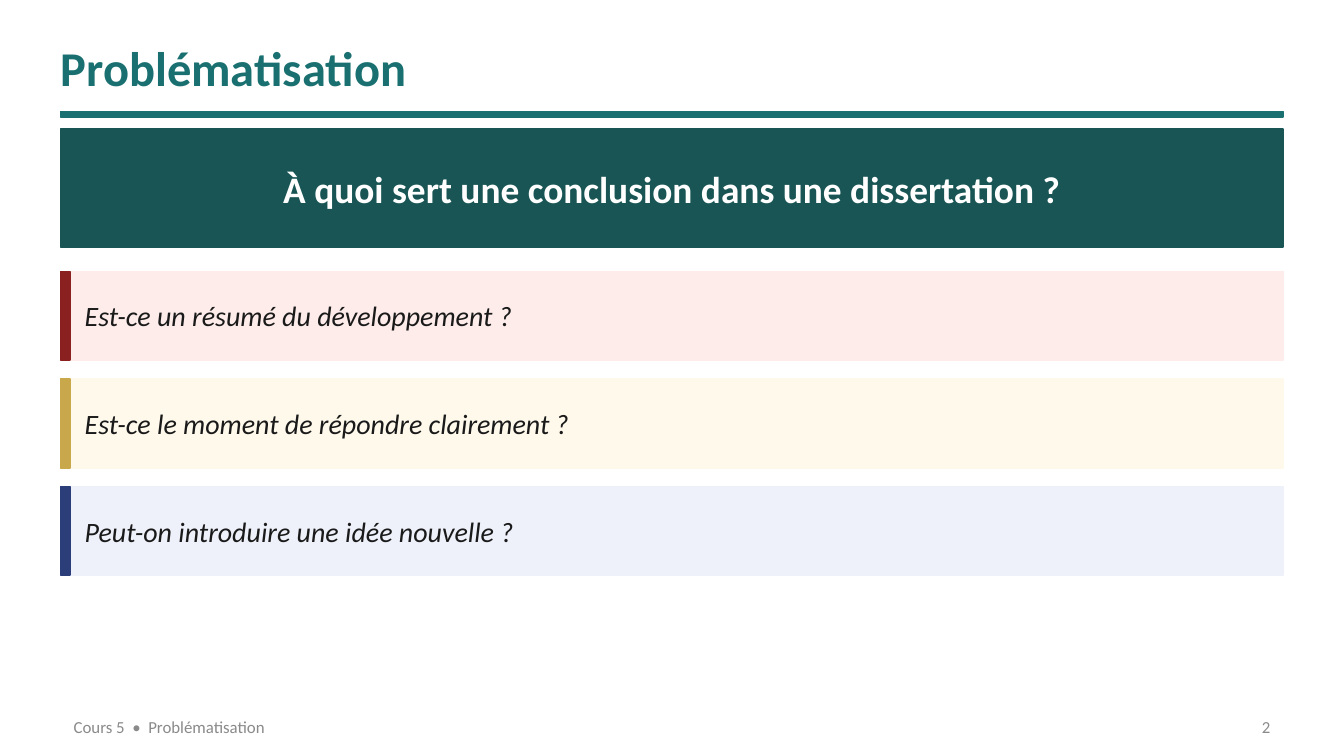
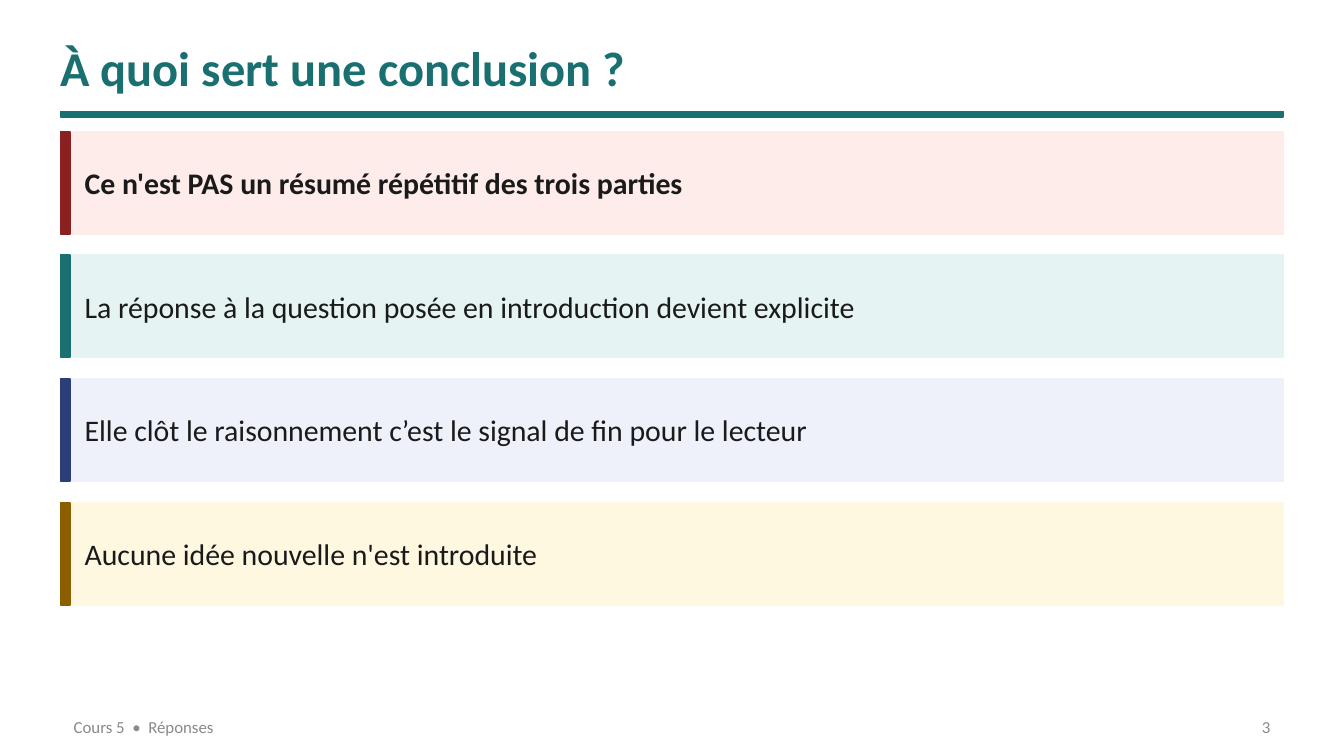
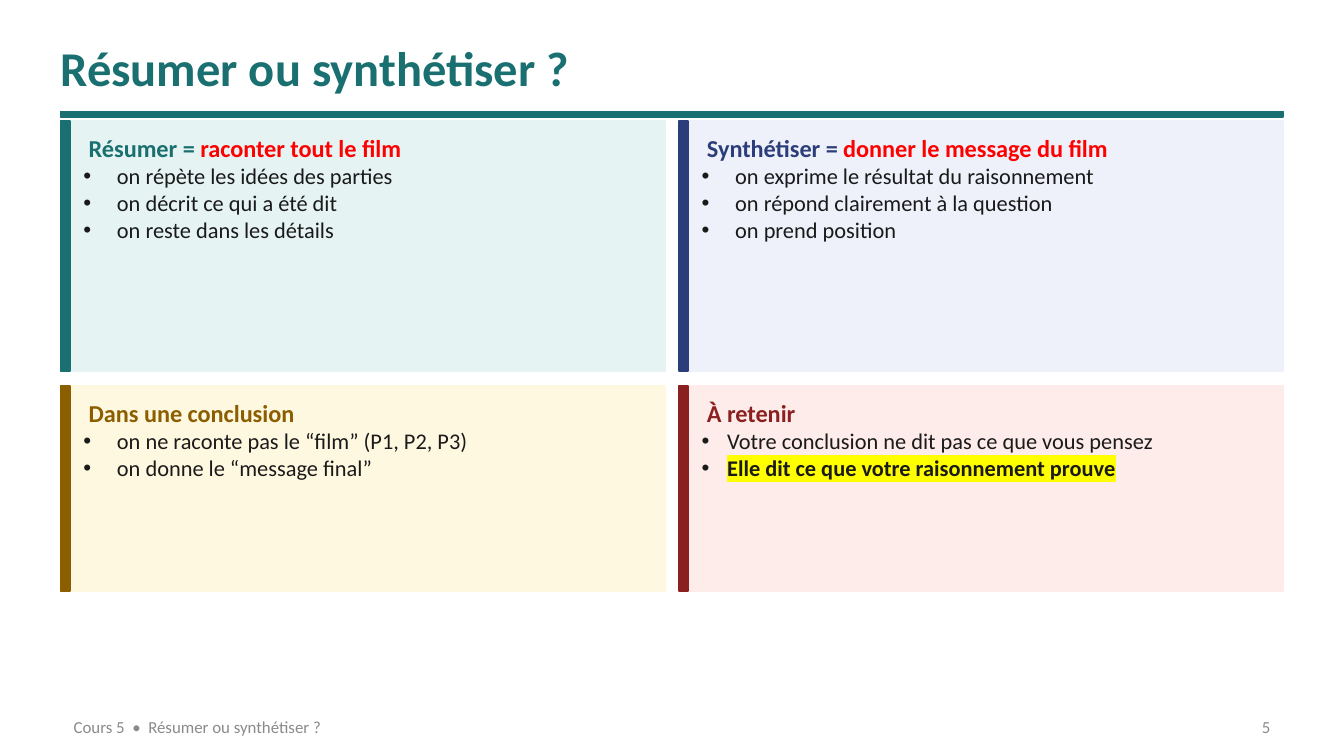
from dataclasses import dataclass

from lxml.etree import SubElement
from pptx import Presentation
from pptx.dml.color import RGBColor as Rgb
from pptx.enum.shapes import MSO_SHAPE as Shape
from pptx.enum.text import MSO_ANCHOR as Anchor, MSO_AUTO_SIZE as AutoSize, PP_ALIGN as Align
from pptx.oxml.ns import qn
from pptx.util import Pt

PX = 9144  # 100 px to the inch


@dataclass(frozen=True)
class Theme:
    font = "Calibri"
    ink, grey, white = "1A1A1A", "8A8A8A", "FFFFFF"
    teal, dark_teal, red, marker = "1A7070", "1A5555", "FF0000", "FFFF00"
    # accent bar, tinted panel
    tones = {
        "red": ("8B2020", "FDECEA"),
        "gold": ("C8A84B", "FEF9EB"),
        "blue": ("2C3E7A", "EEF1FA"),
        "teal": ("1A7070", "E6F3F3"),
        "brown": ("8B5E00", "FFF8E1"),
    }
    title = dict(size=26, bold=True, color=teal)
    banner = dict(size=20, bold=True, color=white)
    question = dict(size=15, italic=True, color=ink)
    answer = dict(size=16, color=ink)
    key_answer = dict(size=16, bold=True, color=ink)
    heading = dict(size=13, bold=True)
    item = dict(size=12, color=ink)
    key_item = dict(size=12, bold=True, color=ink, highlight=marker)
    footer = dict(size=9, color=grey)
    wide_space = dict(size=9, color=grey, spacing=200)


theme = Theme()


def add_block(page, left, top, width, height, color):
    block = page.shapes.add_shape(Shape.RECTANGLE, left * PX, top * PX, width * PX, height * PX)
    block.shadow.inherit = False
    block.fill.solid()
    block.fill.fore_color.rgb = block.line.color.rgb = Rgb.from_string(color)
    block.line.width = Pt(1)


def write(box, place, paras, insets=(0, 0, 0, 0), anchor=Anchor.MIDDLE, align=Align.LEFT):
    """Place a text shape and fill it with (spans, left margin, bulleted) paragraphs."""
    for name, value in zip(("left", "top", "width", "height"), place):
        setattr(box, name, value * PX)
    frame = box.text_frame
    frame.auto_size, frame.word_wrap, frame.vertical_anchor = AutoSize.NONE, True, anchor
    for name, value in zip(("left", "top", "right", "bottom"), insets):
        setattr(frame, "margin_" + name, value * PX)
    for index, (spans, margin, bulleted) in enumerate(paras):
        para = frame.add_paragraph() if index else frame.paragraphs[0]
        para.alignment = align
        props = para._p.get_or_add_pPr()
        props.set("marL", str(margin * PX))
        if bulleted:
            props.set("indent", str(-margin * PX))
            SubElement(props, qn("a:buFont"), typeface="Arial")
            SubElement(props, qn("a:buChar"), char="•")
        for text, style in spans:
            span = para.add_run()
            span.text = text
            values = {"bold": False, "italic": False, **style}
            span.font.color.rgb = Rgb.from_string(values.pop("color"))
            highlight, spacing = values.pop("highlight", None), values.pop("spacing", None)
            values.update(size=Pt(values["size"]), name=theme.font)
            for name, value in values.items():
                setattr(span.font, name, value)
            run_props = span._r.get_or_add_rPr()
            if spacing:
                run_props.set("spc", str(spacing))
            if highlight:
                mark = SubElement(run_props, qn("a:highlight"))
                SubElement(mark, qn("a:srgbClr"), val=highlight)
                run_props.find(qn("a:solidFill")).addnext(mark)


deck = Presentation()
deck.slide_width = 1000 * PX
deck.slide_height = deck.slide_width * 9 // 16
LEFT, WIDTH, BAR = 45, 910, 7

# Title, rule and footer of every page
pages = []
for title, topic, number in (
    ("Problématisation", "Problématisation", 2),
    ("À quoi sert une conclusion ?", "Réponses", 3),
    ("Résumer ou synthétiser ?", "Résumer ou synthétiser ?", 5),
):
    page = deck.slides.add_slide(deck.slide_layouts[5])
    write(page.shapes.title, (LEFT, 20, WIDTH, 60), [([(title, theme.title)], 0, False)])
    add_block(page, LEFT, 83, WIDTH, 4, theme.teal)
    gap = (" ", theme.wide_space)
    course = [("Cours 5", theme.footer), gap, ("•", theme.footer), gap, (topic, theme.footer)]
    for place, spans, align in (
        ((LEFT, 531, 650, 20), course, Align.LEFT),
        ((860, 531, 95, 20), [(str(number), theme.footer)], Align.RIGHT),
    ):
        box = page.shapes.add_textbox(0, 0, 0, 0)
        write(box, place, [(spans, 0, False)], (10, 5, 10, 5), align=align)
    pages.append(page)
questions_page, answers_page, compare_page = pages

# Banner with the main question
add_block(questions_page, LEFT, 96, WIDTH, 88, theme.dark_teal)
main_question = [("À quoi sert une conclusion dans une dissertation ?", theme.banner)]
write(questions_page.shapes.add_textbox(0, 0, 0, 0), (55, 96, 890, 88),
      [(main_question, 0, False)], (10, 5, 10, 5), align=Align.CENTER)

# Full-width strips: page, first top, height, step, lines
for page, first, height, step, lines in (
    (questions_page, 202, 66, 80, (
        ("red", "Est-ce un résumé du développement ?", theme.question),
        ("gold", "Est-ce le moment de répondre clairement ?", theme.question),
        ("blue", "Peut-on introduire une idée nouvelle ?", theme.question),
    )),
    (answers_page, 98, 76, 92, (
        ("red", "Ce n'est PAS un résumé répétitif des trois parties", theme.key_answer),
        ("teal", "La réponse à la question posée en introduction devient explicite", theme.answer),
        ("blue", "Elle clôt le raisonnement c’est le signal de fin pour le lecteur", theme.answer),
        ("brown", "Aucune idée nouvelle n'est introduite", theme.answer),
    )),
):
    for row, (tone, text, style) in enumerate(lines):
        accent, tint = theme.tones[tone]
        top = first + row * step
        add_block(page, LEFT, top, WIDTH, height, tint)
        add_block(page, LEFT, top, BAR, height, accent)
        write(page.shapes.add_textbox(0, 0, 0, 0), (LEFT + 18, top, WIDTH - 32, height),
              [([(text, style)], 0, False)], (0, 0, 8, 0))

# Two-by-two cards: column, row, tone, heading, red part of heading, hanging indent, items
CARD_WIDTH, CARD_GAP = 450, 10
card_rows = ((90, 186), (287, 153))
for column, row, tone, heading, emphasis, hang, items in (
    (0, 0, "teal", "Résumer = ", "raconter tout le film", 25, (
        ("on répète les idées des parties", theme.item),
        ("on décrit ce qui a été dit", theme.item),
        ("on reste dans les détails", theme.item),
    )),
    (0, 1, "brown", "Dans une conclusion", "", 25, (
        ("on ne raconte pas le “film” (P1, P2, P3)", theme.item),
        ("on donne le “message final”", theme.item),
    )),
    (1, 0, "blue", "Synthétiser =", " donner le message du film", 25, (
        ("on exprime le résultat du raisonnement", theme.item),
        ("on répond clairement à la question", theme.item),
        ("on prend position", theme.item),
    )),
    (1, 1, "red", "À retenir", "", 19, (
        ("Votre conclusion ne dit pas ce que vous pensez", theme.item),
        ("Elle dit ce que votre raisonnement prouve", theme.key_item),
    )),
):
    accent, tint = theme.tones[tone]
    left = LEFT + column * (CARD_WIDTH + CARD_GAP)
    top, height = card_rows[row]
    add_block(compare_page, left, top, CARD_WIDTH, height, tint)
    add_block(compare_page, left, top, BAR, height, accent)
    spans = [(heading, {**theme.heading, "color": accent})]
    if emphasis:
        spans.append((emphasis, {**theme.heading, "color": theme.red}))
    paras = [(spans, 4, False)] + [([item], hang, True) for item in items]
    write(compare_page.shapes.add_textbox(0, 0, 0, 0), (left + 10, top + 2, CARD_WIDTH - 18, height - 4),
          paras, (7, 7, 7, 7), Anchor.TOP)

deck.save("out.pptx")
